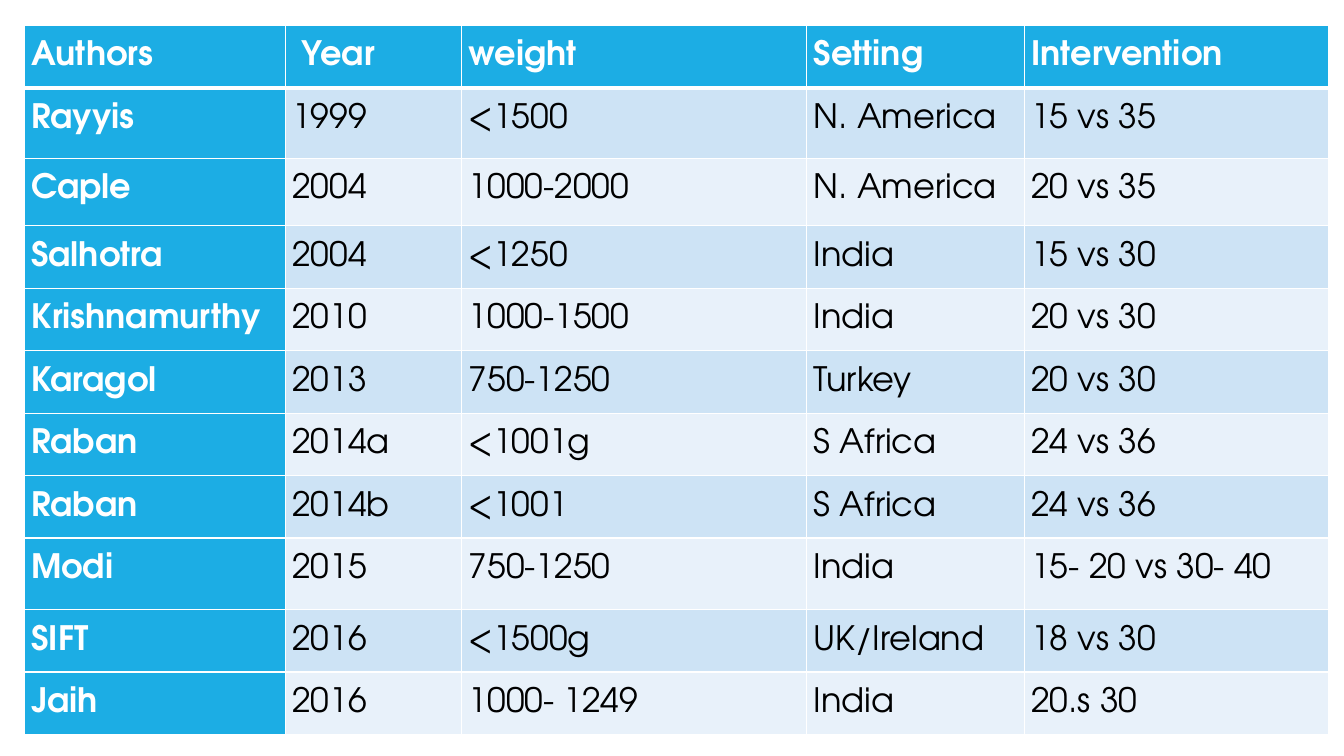
from lxml import etree
from pptx import Presentation
from pptx.dml.color import RGBColor
from pptx.oxml.ns import qn
from pptx.util import Inches, Pt

FONT = "TeX Gyre Adventor"
WHITE, BLACK, BLUE = "FFFFFF", "000000", "1CADE4"
BANDS = ["CDE3F5", "E8F1FA"]

COL_WIDTHS = [2.59, 1.75, 3.42, 2.16, 3.02]
ROW_HEIGHT = 0.62
TALL_ROWS = {1: 0.7, 2: 0.67, 8: 0.71}
STUDIES = [
    ["Authors", " Year", "weight", "Setting", "Intervention"],
    ["Rayyis", "1999", "<1500", "N. America", "15 vs 35"],
    ["Caple", "2004", "1000-2000", "N. America", "20 vs 35"],
    ["Salhotra", "2004", "<1250", "India", "15 vs 30"],
    ["Krishnamurthy", "2010", "1000-1500", "India", "20 vs 30"],
    ["Karagol", "2013", "750-1250", "Turkey", "20 vs 30"],
    ["Raban", "2014a", "<1001g", "S Africa", "24 vs 36"],
    ["Raban", "2014b", "<1001", "S Africa", "24 vs 36"],
    ["Modi", "2015", "750-1250", "India", "15- 20 vs 30- 40"],
    ["SIFT", "2016", "<1500g", "UK/Ireland", "18 vs 30"],
    ["Jaih", "2016", "1000- 1249", "India", "s 30"],
]


def rgb(color):
    return RGBColor.from_string(color)


def set_borders(cell, widths):
    """Draw white cell borders; widths holds points for L, R, T, B."""
    tc_pr = cell._tc.get_or_add_tcPr()
    for i, (side, width) in enumerate(zip("LRTB", widths)):
        ln = etree.Element(qn(f"a:ln{side}"), w=str(Pt(width)))
        fill = etree.SubElement(ln, qn("a:solidFill"))
        etree.SubElement(fill, qn("a:srgbClr"), val=WHITE)
        tc_pr.insert(i, ln)


def number_from(p, start, indent):
    """Turn a paragraph into a numbered item with a hanging indent."""
    p_pr = p._p.get_or_add_pPr()
    p_pr.set("marL", str(Inches(indent)))
    p_pr.set("indent", str(Inches(-indent)))
    number = etree.Element(qn("a:buAutoNum"), type="arabicPeriod", startAt=str(start))
    spacing = p_pr.find(qn("a:lnSpc"))
    spacing.addnext(number)


def format_cell(cell, text, fill, color, bold):
    cell.fill.solid()
    cell.fill.fore_color.rgb = rgb(fill)
    cell.margin_left = cell.margin_right = Inches(0.07)
    cell.margin_top = cell.margin_bottom = 0
    cell.text = text
    p = cell.text_frame.paragraphs[0]
    p.line_spacing = 1.5
    p.font.name = FONT
    p.font.size = Pt(24)
    p.font.bold = bold
    p.font.color.rgb = rgb(color)


def add_study_table(slide, left, top):
    heights = [TALL_ROWS.get(i, ROW_HEIGHT) for i in range(len(STUDIES))]
    frame = slide.shapes.add_table(
        len(STUDIES), len(COL_WIDTHS), Inches(left), Inches(top),
        Inches(sum(COL_WIDTHS)), Inches(sum(heights)))
    table = frame.table
    table.first_col = True
    table.horz_banding = False
    for col, width in zip(table.columns, COL_WIDTHS):
        col.width = Inches(width)
    for row, height in zip(table.rows, heights):
        row.height = Inches(height)

    # Header row and author column are blue, the rest is banded
    for i, study in enumerate(STUDIES):
        for j, text in enumerate(study):
            cell = table.cell(i, j)
            heading = i == 0 or j == 0
            fill = BLUE if heading else BANDS[(i - 1) % 2]
            format_cell(cell, text, fill, WHITE if heading else BLACK, heading)
            set_borders(cell, [1, 1, 3 if i == 1 else 1, 3 if i == 0 else 1])

    # The last intervention is a list item numbered 20
    last = table.cell(len(STUDIES) - 1, len(COL_WIDTHS) - 1)
    number_from(last.text_frame.paragraphs[0], 20, 0.38)


def main():
    prs = Presentation()
    prs.slide_width, prs.slide_height = Inches(13.33), Inches(7.5)
    slide = prs.slides.add_slide(prs.slide_layouts[6])
    add_study_table(slide, 0.24, 0.25)
    prs.save("out.pptx")


if __name__ == "__main__":
    main()
